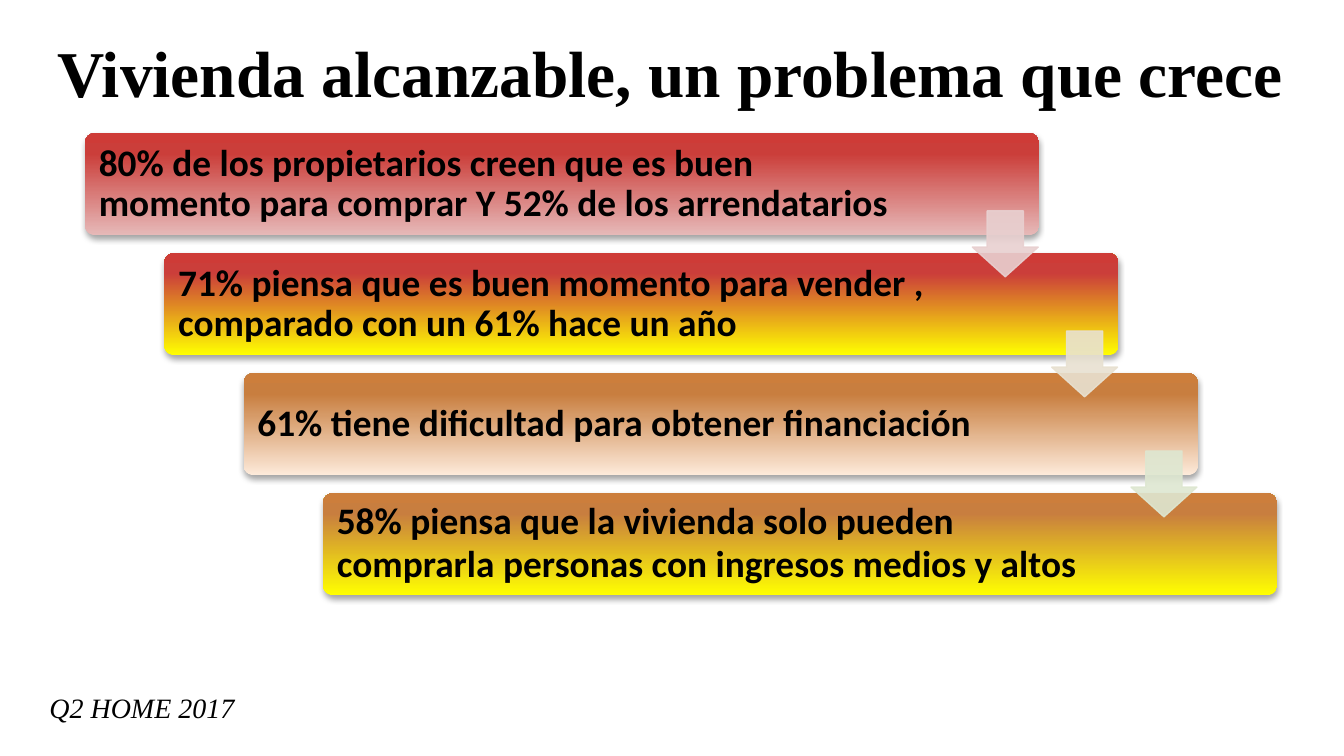
from copy import deepcopy

from lxml.etree import SubElement
from pptx import Presentation
from pptx.dml.color import RGBColor
from pptx.enum.shapes import MSO_SHAPE
from pptx.enum.text import MSO_ANCHOR, PP_ALIGN
from pptx.oxml.ns import qn
from pptx.util import Pt

COLORS = {
    "text": "000000",
    "red": ("CB3E3A", "CE3B37"),
    "orange": ("C87E3F", "CC7E3C"),
    "pink": "E6B9B8",
    "yellow": "FFFF00",
    "cream": "FDEADA",
    "arrows": ("E8D0D0", "E8E1D1", "DEE7D1"),
}
STEPS = [
    ("80% de los propietarios creen que es buen momento para comprar "
     "Y 52% de los arrendatarios", "pink", "red", 447.8),
    ("71% piensa que es buen momento para vender , comparado con un 61% "
     "hace un año", "yellow", "red", 430),
    ("61% tiene dificultad para obtener financiación", "cream", "orange", 430),
    ("58% piensa que la vivienda solo pueden comprarla personas con "
     "ingresos medios y altos", "yellow", "orange", 430),
]
LEFT, TOP = 45.5, 71.3
STEP_X, STEP_Y = 42.5, 64.3
BAR_WIDTH, BAR_HEIGHT = 511.2, 54.7
ARROW_SIZE = 35.3


def rgb(value):
    return RGBColor.from_string(value)


class SlideBuilder:
    title_style = {"name": "Times New Roman", "size": Pt(35), "bold": True}
    step_style = {"name": "Calibri", "size": Pt(20), "bold": True}
    source_style = {"name": "Times New Roman", "size": Pt(15), "italic": True}

    def __init__(self, page):
        self.page = page

    def fill_frame(self, frame, text, style, margins=(7.2, 3.6)):
        side, end = map(Pt, margins)
        layout = {"word_wrap": True, "margin_left": side, "margin_right": side,
                  "margin_top": end, "margin_bottom": end}
        for name, value in layout.items():
            setattr(frame, name, value)
        para = frame.paragraphs[0]
        self.add_span(para, text, style)
        return para

    def add_span(self, para, text, style):
        span = para.add_run()
        span.text = text
        span.font.color.rgb = rgb(COLORS["text"])
        for name, value in style.items():
            setattr(span.font, name, value)

    def title(self, text, left, top, width, height):
        box = self.page.shapes.title
        box.left, box.top, box.width, box.height = map(Pt, (left, top, width, height))
        box.text_frame.vertical_anchor = MSO_ANCHOR.MIDDLE
        para = self.fill_frame(box.text_frame, text, self.title_style)
        para.alignment = PP_ALIGN.CENTER

    def text(self, text, left, top, width, height, style, margins=(7.2, 3.6)):
        box = self.page.shapes.add_textbox(*map(Pt, (left, top, width, height)))
        para = self.fill_frame(box.text_frame, text, style, margins)
        return box.text_frame, para

    def shape(self, kind, left, top, width, height, adjustments):
        shape = self.page.shapes.add_shape(kind, *map(Pt, (left, top, width, height)))
        shape.shadow.inherit = False
        for index, value in enumerate(adjustments):
            shape.adjustments[index] = value
        return shape

    def bar(self, left, top, colors):
        """Draw a rounded bar with a gradient rising from the first colour."""
        bar = self.shape(MSO_SHAPE.ROUNDED_RECTANGLE, left, top,
                         BAR_WIDTH, BAR_HEIGHT, [0.1])
        bar.line.fill.background()
        bar.fill.gradient()
        bar.fill.gradient_angle = 90
        stops = bar._element.spPr.find(".//" + qn("a:gsLst"))
        stops.append(deepcopy(stops[-1]))
        for stop, position, color in zip(bar.fill.gradient_stops, (0, 0.8, 1), colors):
            stop.position = position
            stop.color.rgb = rgb(color)
        self.shadow(bar)

    def shadow(self, shape):
        effects = shape._element.spPr.find(qn("a:effectLst"))
        shadow = SubElement(effects, qn("a:outerShdw"), blurRad=str(Pt(3.1)),
                            dist=str(Pt(1.8)), dir="5400000", rotWithShape="0")
        color = SubElement(shadow, qn("a:srgbClr"), val="000000")
        SubElement(color, qn("a:alpha"), val="35000")

    def step_text(self, text, left, top, width):
        frame, para = self.text(text, left, top, width, 51.1, self.step_style, (5.8, 5.8))
        frame.vertical_anchor = MSO_ANCHOR.MIDDLE
        para.line_spacing = 0.9
        return para

    def arrow(self, left, top, color):
        arrow = self.shape(MSO_SHAPE.DOWN_ARROW, left, top,
                           ARROW_SIZE, ARROW_SIZE, [0.55, 0.45])
        arrow.fill.solid()
        arrow.fill.fore_color.rgb = rgb(color)
        arrow.line.color.rgb = rgb(color)
        arrow.line.width = Pt(0.75)
        for paint in arrow._element.spPr.iter(qn("a:srgbClr")):
            SubElement(paint, qn("a:alpha"), val="90000")


def main():
    deck = Presentation()
    deck.slide_width, deck.slide_height = Pt(720), Pt(405)
    builder = SlideBuilder(deck.slides.add_slide(deck.slide_layouts[5]))

    builder.title("Vivienda alcanzable, un problema que crece", 18, 4.3, 682.6, 67.7)
    for index, (text, bottom, upper, width) in enumerate(STEPS):
        left, top = LEFT + index * STEP_X, TOP + index * STEP_Y
        builder.bar(left, top, (COLORS[bottom], *COLORS[upper]))
        para = builder.step_text(text, left + 1.6, top + 1.8, width)
    # The larger closing space sets the height of the last line.
    builder.add_span(para, " ", {**builder.step_style, "size": Pt(22)})

    for index, color in enumerate(COLORS["arrows"]):
        builder.arrow(LEFT + index * STEP_X + 475.4, TOP + index * STEP_Y + 41.7, color)
    builder.text("Q2 HOME 2017", 19.4, 366.5, 149, 25.2, builder.source_style)
    deck.save("out.pptx")


if __name__ == "__main__":
    main()
